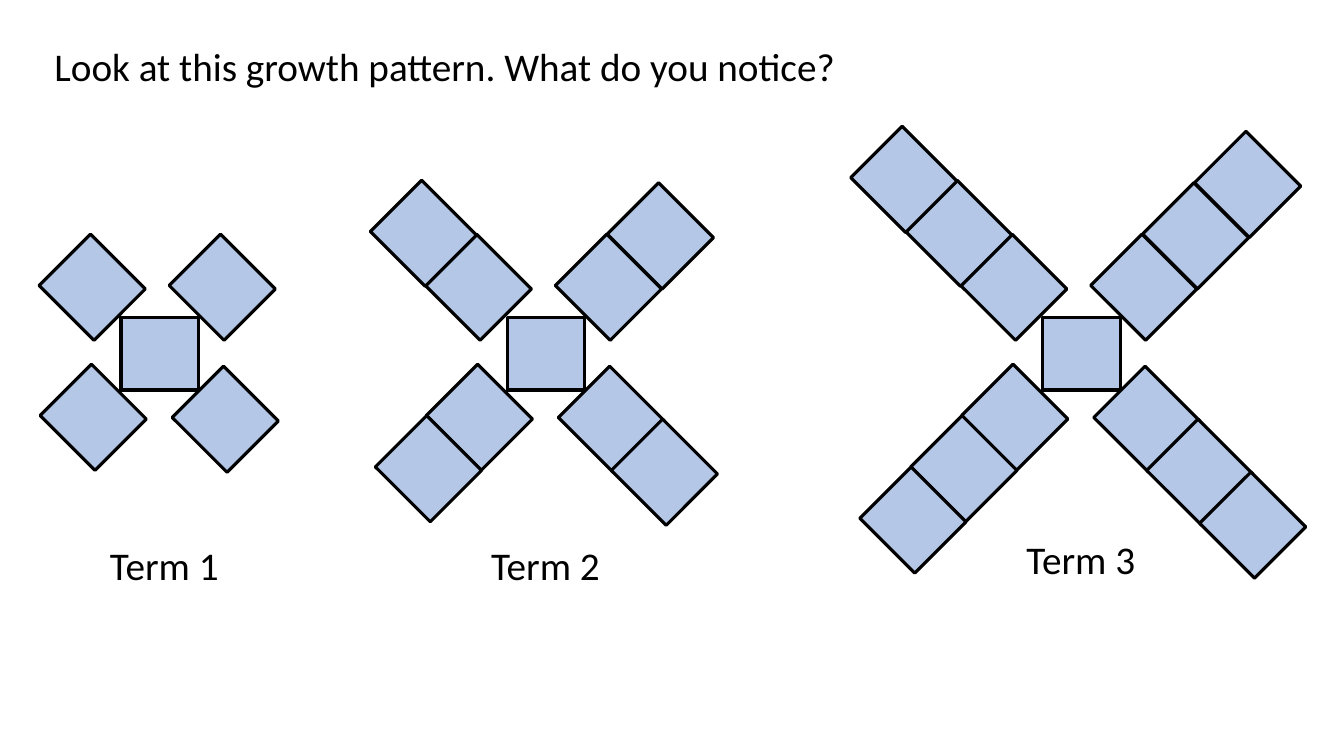
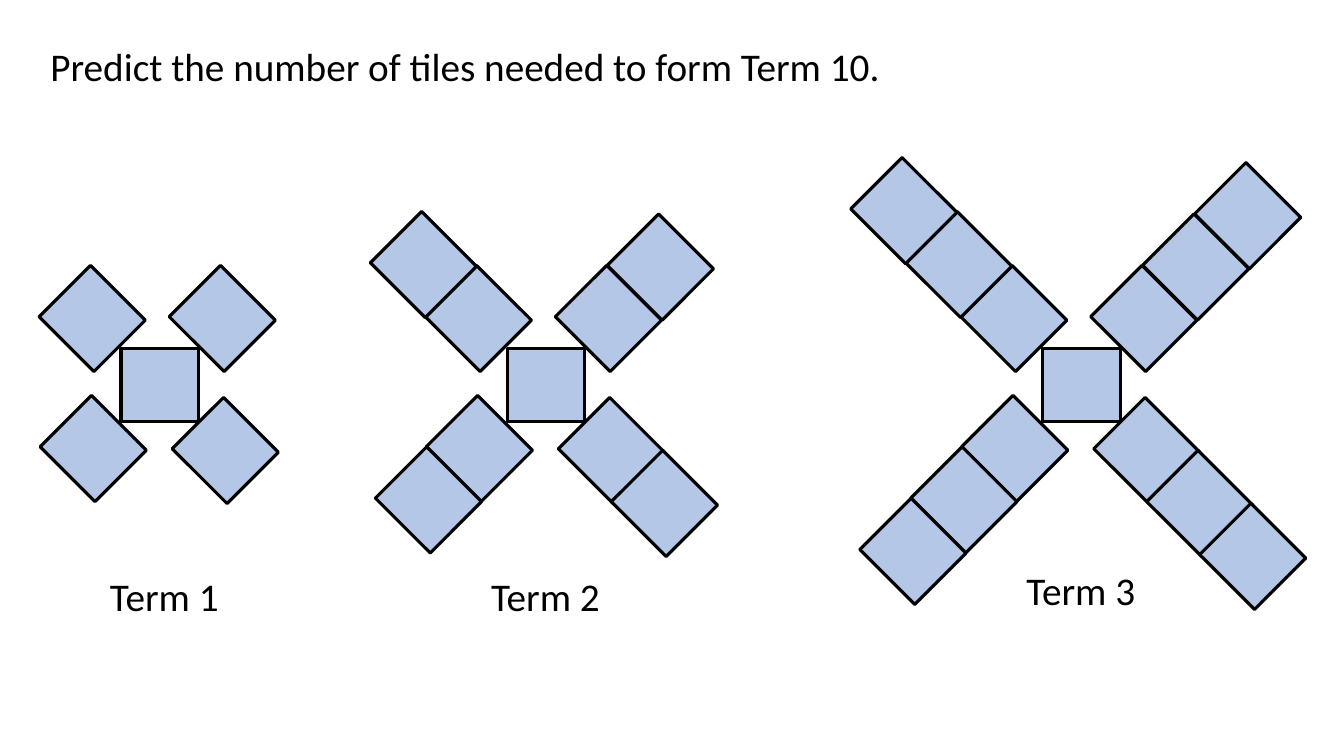
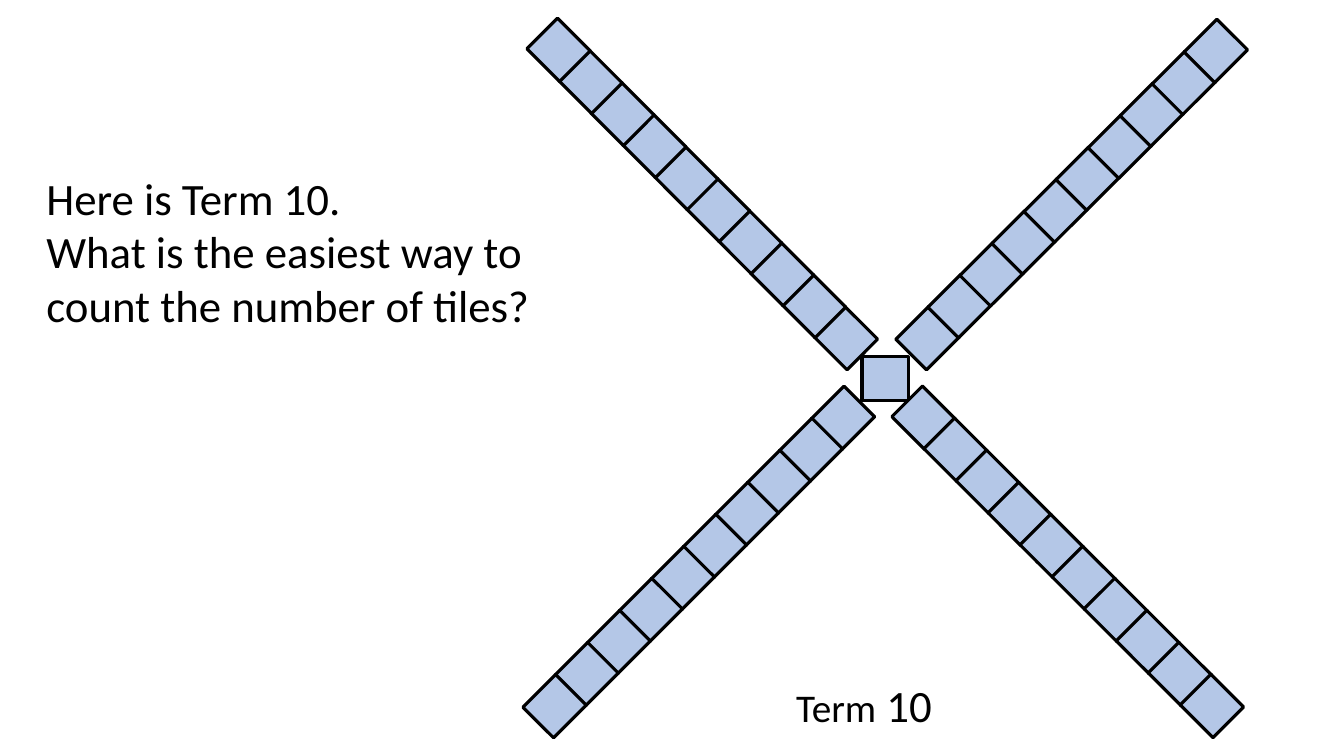
import pptx
import pptx.util
import pptx.dml.color
import pptx.enum.shapes
import pptx.enum.text

BLACK = pptx.dml.color.RGBColor(0x00, 0x00, 0x00)
TILE_BLUE = pptx.dml.color.RGBColor(0xB4, 0xC7, 0xE7)
FONT = "Calibri"
EMU_PER_PX = 9144

LARGE_TILES = {
    "size": (77, 72),
    "longest": 3,
    "arms": [
        (45, (62, -66), (165, -168)),
        (45, (-66, 63), (-167, 165)),
        (45, (-67, -66), (-176, -173)),
        (45, (65, 65), (170, 170)),
    ],
}
SMALL_TILES = {
    "size": (46, 43),
    "longest": 10,
    "arms": [
        (45, (38, 39), (324, 325)),
        (135, (-42, 39), (-328, 325)),
        (315, (42, -40), (328, -325)),
        (45, (-39, -40), (-324, -326)),
    ],
}

FIRST_TERMS = [
    (1, (120, 315), (86, 532, 154, 57), [("Term 1", 28)]),
    (2, (503, 315), (464, 532, 154, 57), [("Term 2", 28)]),
    (3, (1034, 315), (995, 526, 154, 57), [("Term 3", 28)]),
]
TENTH_TERM = [
    (10, (855, 354), (766, 667, 182, 64), [("Term", 28), (" 10", 32)]),
]

SLIDES = [
    {
        "prompt": ["Look at this growth pattern. What do you notice?"],
        "prompt_box": (44, 37, 1059, 57),
        "prompt_size": 28,
        "tiles": LARGE_TILES,
        "terms": FIRST_TERMS,
        "drop": 0,
    },
    {
        "prompt": ["Predict the number of tiles needed to form Term 10."],
        "prompt_box": (40, 37, 1059, 57),
        "prompt_size": 28,
        "tiles": LARGE_TILES,
        "terms": FIRST_TERMS,
        "drop": 31,
    },
    {
        "prompt": [
            "Here is Term 10.",
            "What is the easiest way to",
            "count the number of tiles?",
        ],
        "prompt_box": (36, 164, 530, 172),
        "prompt_size": 32,
        "tiles": SMALL_TILES,
        "terms": TENTH_TERM,
        "drop": 0,
    },
]


def px(length):
    return pptx.util.Emu(round(length * EMU_PER_PX))


def write(box, paragraphs, align):
    frame = box.text_frame
    frame.word_wrap = True
    frame.auto_size = pptx.enum.text.MSO_AUTO_SIZE.NONE
    frame.vertical_anchor = pptx.enum.text.MSO_ANCHOR.TOP
    for index, spans in enumerate(paragraphs):
        para = frame.add_paragraph() if index else frame.paragraphs[0]
        para.alignment = align
        for text, size in spans:
            span = para.add_run()
            span.text = text
            span.font.name = FONT
            span.font.size = pptx.util.Pt(size)
            span.font.color.rgb = BLACK


def add_prompt(page, lines, bounds, size):
    title = page.shapes.title
    title.left, title.top, title.width, title.height = map(px, bounds)
    write(title, [[(line, size)] for line in lines], pptx.enum.text.PP_ALIGN.LEFT)


def add_tile(group, left, top, size, rotation):
    tile = group.shapes.add_shape(
        pptx.enum.shapes.MSO_SHAPE.RECTANGLE, px(left), px(top), *map(px, size)
    )
    tile.rotation = rotation
    tile.shadow.inherit = False
    tile.fill.solid()
    tile.fill.fore_color.rgb = TILE_BLUE
    tile.line.color.rgb = BLACK
    tile.line.width = pptx.util.Pt(2.25)


def add_pattern(page, tiles, term, left, top):
    group = page.shapes.add_group_shape()
    add_tile(group, left, top, tiles["size"], 0)
    for rotation, first, last in tiles["arms"]:
        for index in range(term):
            part = index / (tiles["longest"] - 1)
            across, down = (a + (b - a) * part for a, b in zip(first, last))
            add_tile(group, left + across, top + down, tiles["size"], rotation)


def add_label(page, bounds, spans, drop):
    left, top, width, height = bounds
    box = page.shapes.add_textbox(px(left), px(top + drop), px(width), px(height))
    write(box, [spans], pptx.enum.text.PP_ALIGN.CENTER)


def main():
    deck = pptx.Presentation()
    deck.slide_width, deck.slide_height = px(1333), px(750)
    title_only = deck.slide_layouts[5]
    for content in SLIDES:
        page = deck.slides.add_slide(title_only)
        add_prompt(page, content["prompt"], content["prompt_box"], content["prompt_size"])
        drop = content["drop"]
        for term, (left, top), label_box, label in content["terms"]:
            add_pattern(page, content["tiles"], term, left, top + drop)
            add_label(page, label_box, label, drop)
    deck.save("out.pptx")


if __name__ == "__main__":
    main()
